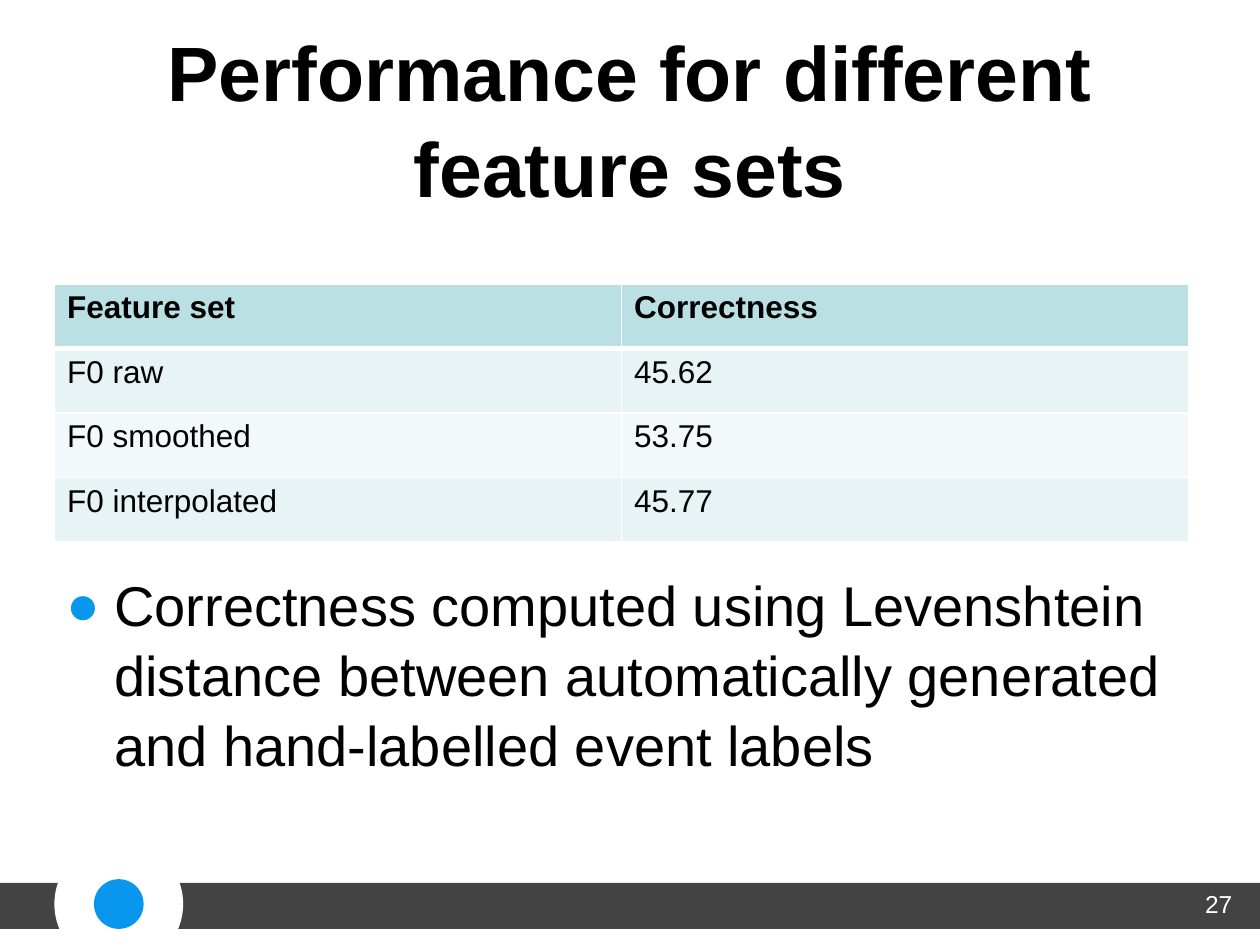
from dataclasses import dataclass

import lxml.etree
import pptx
import pptx.dml.color
import pptx.enum.shapes
import pptx.enum.text
import pptx.oxml.ns
import pptx.util

Pt = pptx.util.Pt
qn = pptx.oxml.ns.qn
ALIGN = pptx.enum.text.PP_ALIGN
ANCHOR = pptx.enum.text.MSO_ANCHOR
SHAPE = pptx.enum.shapes.MSO_SHAPE


@dataclass(frozen=True)
class Theme:
    font: str = "Arial"
    text: str = "000000"
    white: str = "FFFFFF"
    bar: str = "434343"
    accent: str = "0996ED"
    header: str = "BBE0E3"
    bands: tuple = ("E7F3F4", "F3F9FA")
    title_size: int = 44
    body_size: int = 32
    table_size: int = 18
    number_size: int = 14


THEME = Theme()


def rgb(color):
    return pptx.dml.color.RGBColor.from_string(color)


def write_text(frame, text, *, size, color=THEME.text, bold=False,
               align=ALIGN.LEFT, anchor=ANCHOR.TOP, line_spacing=None):
    frame.word_wrap = True
    frame.vertical_anchor = anchor
    paragraph = frame.paragraphs[0]
    paragraph.alignment = align
    if line_spacing:
        paragraph.line_spacing = line_spacing
    run = paragraph.add_run()
    run.text = text
    run.font.name = THEME.font
    run.font.size = Pt(size)
    run.font.bold = bold
    run.font.color.rgb = rgb(color)
    return paragraph


def add_text_box(slide, box, text, **text_format):
    shape = slide.shapes.add_textbox(*map(Pt, box))
    return write_text(shape.text_frame, text, **text_format)


def add_plain_shape(slide, kind, box, color):
    shape = slide.shapes.add_shape(kind, *map(Pt, box))
    shape.shadow.inherit = False
    shape.fill.solid()
    shape.fill.fore_color.rgb = rgb(color)
    shape.line.fill.background()


def add_bullet(paragraph, indent):
    properties = paragraph._p.get_or_add_pPr()
    properties.set("marL", str(Pt(indent)))
    properties.set("indent", str(-Pt(indent)))
    color = lxml.etree.SubElement(properties, qn("a:buClr"))
    lxml.etree.SubElement(color, qn("a:srgbClr"), val=THEME.accent)
    lxml.etree.SubElement(properties, qn("a:buFont"), typeface=THEME.font)
    lxml.etree.SubElement(properties, qn("a:buChar"), char="●")


def set_borders(cell, top, bottom):
    """Give the cell white borders, 1 pt wide at the sides."""
    properties = cell._tc.get_or_add_tcPr()
    for side, width in (("L", 1), ("R", 1), ("T", top), ("B", bottom)):
        line = lxml.etree.SubElement(properties, qn(f"a:ln{side}"), w=str(Pt(width)))
        fill = lxml.etree.SubElement(line, qn("a:solidFill"))
        lxml.etree.SubElement(fill, qn("a:srgbClr"), val=THEME.white)


def add_footer(slide, box, number):
    """Draw a bar broken by a ring and dot, with the slide number at its right."""
    left, top, width, height = box
    gap_left, gap_right = 36.7, 99.4
    for start, end in ((0, gap_left), (gap_right, width)):
        add_plain_shape(slide, SHAPE.RECTANGLE,
                        (left + start, top, end - start, height), THEME.bar)
    center_x, center_y = left + 67.9, top + 12
    for diameter, color in ((73.6, THEME.white), (28.4, THEME.accent)):
        add_plain_shape(slide, SHAPE.OVAL,
                        (center_x - diameter / 2, center_y - diameter / 2,
                         diameter, diameter), color)
    add_text_box(slide, (left + width - 121.7, top, 113, 37.4), number,
                 size=THEME.number_size, color=THEME.white, align=ALIGN.RIGHT)


def add_title(slide, box, text):
    add_text_box(slide, box, text, size=THEME.title_size, bold=True,
                 align=ALIGN.CENTER, anchor=ANCHOR.MIDDLE, line_spacing=1.04)


def add_body(slide, box, text):
    paragraph = add_text_box(slide, box, text, size=THEME.body_size,
                             line_spacing=1.04)
    paragraph.space_before = Pt(0.2 * THEME.body_size)
    add_bullet(paragraph, 27)


def add_results_table(slide, box, rows):
    left, top, width, height = map(Pt, box)
    table = slide.shapes.add_table(len(rows), len(rows[0]),
                                   left, top, width, height).table
    for row_index, values in enumerate(rows):
        is_header = row_index == 0
        color = THEME.header if is_header else THEME.bands[(row_index - 1) % 2]
        for column_index, value in enumerate(values):
            cell = table.cell(row_index, column_index)
            set_borders(cell, top=3 if row_index == 1 else 1,
                        bottom=3 if is_header else 1)
            cell.fill.solid()
            cell.fill.fore_color.rgb = rgb(color)
            write_text(cell.text_frame, value, size=THEME.table_size, bold=is_header)


def main():
    presentation = pptx.Presentation()
    presentation.slide_width, presentation.slide_height = Pt(720), Pt(540)
    slide = presentation.slides.add_slide(presentation.slide_layouts[6])
    slide.background.fill.solid()
    slide.background.fill.fore_color.rgb = rgb(THEME.white)

    add_footer(slide, (0, 504.6, 720, 26.2), "27")
    add_title(slide, (36, 21.6, 648, 90), "Performance for different feature sets")
    add_body(slide, (31.2, 321.2, 648, 154.8),
             "Correctness computed using Levenshtein distance between "
             "automatically generated and hand-labelled event labels")
    add_results_table(slide, (31.2, 162.3, 648, 147.4), [
        ("Feature set", "Correctness"),
        ("F0 raw", "45.62"),
        ("F0 smoothed", "53.75"),
        ("F0 interpolated", "45.77"),
    ])
    presentation.save("out.pptx")


if __name__ == "__main__":
    main()
